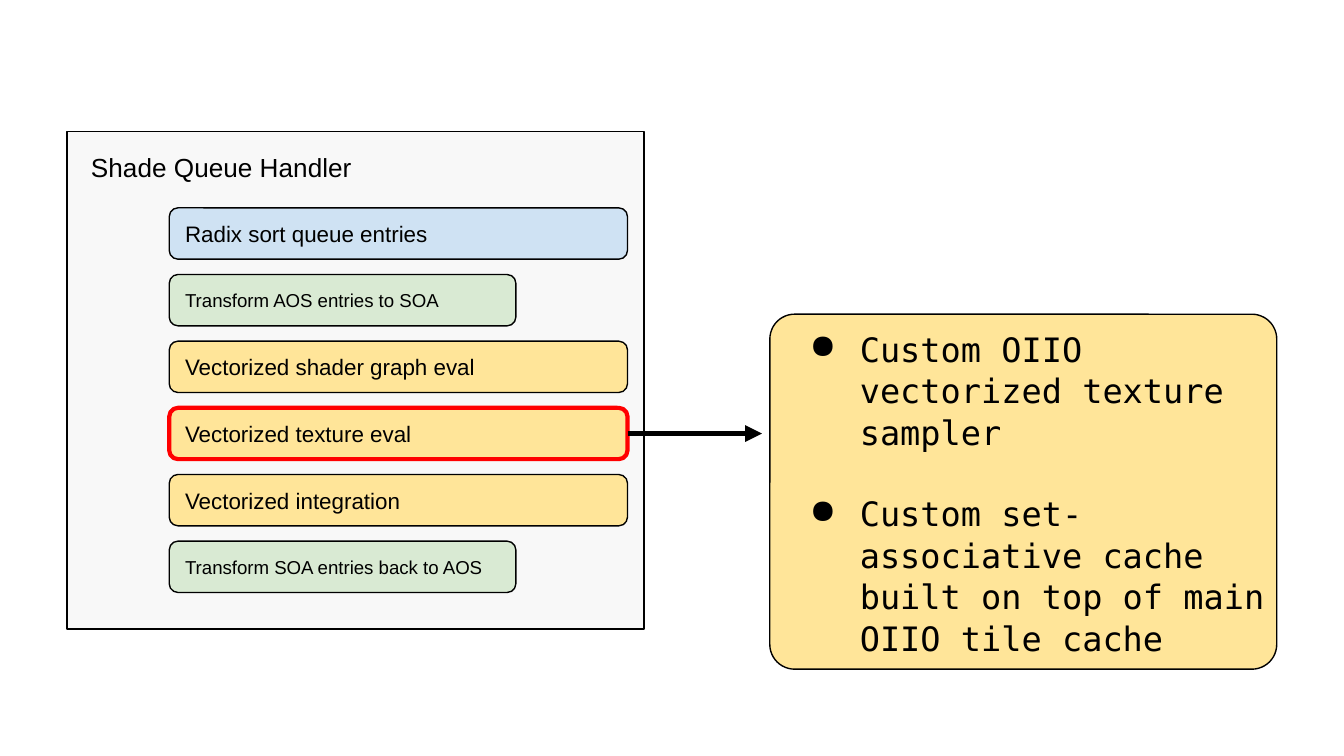
import pptx
import pptx.util
import pptx.dml.color
import pptx.enum.shapes
import pptx.enum.text
import pptx.oxml
import pptx.oxml.ns
from pptx.util import Cm

RGBColor = pptx.dml.color.RGBColor
BLACK = RGBColor(0x00, 0x00, 0x00)
RED = RGBColor(0xFF, 0x00, 0x00)
PALE_GREY = RGBColor(0xF8, 0xF8, 0xF8)
BLUE = RGBColor(0xCF, 0xE2, 0xF3)
GREEN = RGBColor(0xD9, 0xEA, 0xD3)
YELLOW = RGBColor(0xFF, 0xE5, 0x99)

SHAPES = pptx.enum.shapes.MSO_SHAPE
ANCHOR = pptx.enum.text.MSO_ANCHOR


class SlideBuilder:
    sans = "Arial"
    mono = "DejaVu Sans Mono"
    inset = Cm(0.25)

    def __init__(self, slide):
        self.slide = slide

    def box(self, left, top, width, height, fill, corner=None, outline=BLACK, weight=0.75):
        kind = SHAPES.RECTANGLE if corner is None else SHAPES.ROUNDED_RECTANGLE
        box = self.slide.shapes.add_shape(kind, Cm(left), Cm(top), Cm(width), Cm(height))
        if corner is not None:
            box.adjustments[0] = corner
        box.shadow.inherit = False
        box.fill.solid()
        box.fill.fore_color.rgb = fill
        box.line.color.rgb = outline
        box.line.width = pptx.util.Pt(weight)
        return box

    def text_area(self, left, top, width, height):
        return self.slide.shapes.add_textbox(Cm(left), Cm(top), Cm(width), Cm(height))

    def prepare_frame(self, shape, anchor):
        frame = shape.text_frame
        frame.word_wrap = True
        frame.vertical_anchor = anchor
        frame.margin_left = frame.margin_right = self.inset
        frame.margin_top = frame.margin_bottom = self.inset
        return frame

    def add_run(self, paragraph, words, size, font):
        paragraph.alignment = pptx.enum.text.PP_ALIGN.LEFT
        run = paragraph.add_run()
        run.text = words
        run.font.name = font
        run.font.size = pptx.util.Pt(size)
        run.font.color.rgb = BLACK

    def label(self, shape, words, size, anchor=ANCHOR.MIDDLE):
        frame = self.prepare_frame(shape, anchor)
        self.add_run(frame.paragraphs[0], words, size, self.sans)

    def bullets(self, shape, points, size, gap):
        frame = self.prepare_frame(shape, ANCHOR.TOP)
        for index, point in enumerate(points):
            paragraph = frame.add_paragraph() if index else frame.paragraphs[0]
            properties = paragraph._p.get_or_add_pPr()
            properties.set("marL", str(Cm(1.27)))
            properties.set("indent", str(Cm(-0.95)))
            bullet = pptx.oxml.parse_xml(
                '<a:buChar %s char="●"/>' % pptx.oxml.ns.nsdecls("a"))
            properties.append(bullet)
            paragraph.line_spacing = 1.03
            if index:
                paragraph.space_before = pptx.util.Pt(gap)
            self.add_run(paragraph, point, size, self.mono)

    def arrow_from_right(self, source, end_x, weight):
        middle = source.top + source.height // 2
        arrow = self.slide.shapes.add_connector(
            pptx.enum.shapes.MSO_CONNECTOR.STRAIGHT,
            source.left + source.width, middle, Cm(end_x), middle)
        arrow.begin_connect(source, 3)
        arrow.line.color.rgb = BLACK
        arrow.line.width = pptx.util.Pt(weight)
        namespace = pptx.oxml.ns.nsdecls("a")
        arrow.line._get_or_add_ln().append(
            pptx.oxml.parse_xml('<a:tailEnd %s type="triangle"/>' % namespace))
        arrow._element.spPr.append(
            pptx.oxml.parse_xml("<a:effectLst %s/>" % namespace))


def main():
    deck = pptx.Presentation()
    deck.slide_width = Cm(25.4)
    deck.slide_height = Cm(14.29)
    builder = SlideBuilder(deck.slides.add_slide(deck.slide_layouts[6]))

    builder.box(1.27, 2.49, 10.9, 9.4, PALE_GREY)
    heading = builder.text_area(1.47, 2.62, 7.47, 1.04)
    builder.label(heading, "Shade Queue Handler", 14, ANCHOR.TOP)

    wide, narrow = (8.66, 12), (6.55, 10)
    plain, highlighted = (BLACK, 0.75), (RED, 2.25)
    stages = [
        ("Radix sort queue entries", BLUE, wide, plain),
        ("Transform AOS entries to SOA", GREEN, narrow, plain),
        ("Vectorized shader graph eval", YELLOW, wide, plain),
        ("Vectorized texture eval", YELLOW, wide, highlighted),
        ("Vectorized integration", YELLOW, wide, plain),
        ("Transform SOA entries back to AOS", GREEN, narrow, plain),
    ]
    stage_boxes = {}
    for row, (words, fill, (width, size), (outline, weight)) in enumerate(stages):
        stage = builder.box(3.2, 3.93 + row * 1.26, width, 0.97, fill, 0.17, outline, weight)
        builder.label(stage, words, size)
        stage_boxes[words] = stage

    builder.arrow_from_right(stage_boxes["Vectorized texture eval"], 14.4, 3)

    builder.box(14.55, 5.94, 9.58, 6.71, YELLOW, 0.07)
    details = builder.text_area(14.73, 5.94, 9.46, 6.93)
    builder.bullets(details, [
        "Custom OIIO vectorized texture sampler",
        "Custom set-associative cache built on top of main OIIO tile cache",
    ], 18, 21.6)

    deck.save("out.pptx")


if __name__ == "__main__":
    main()
